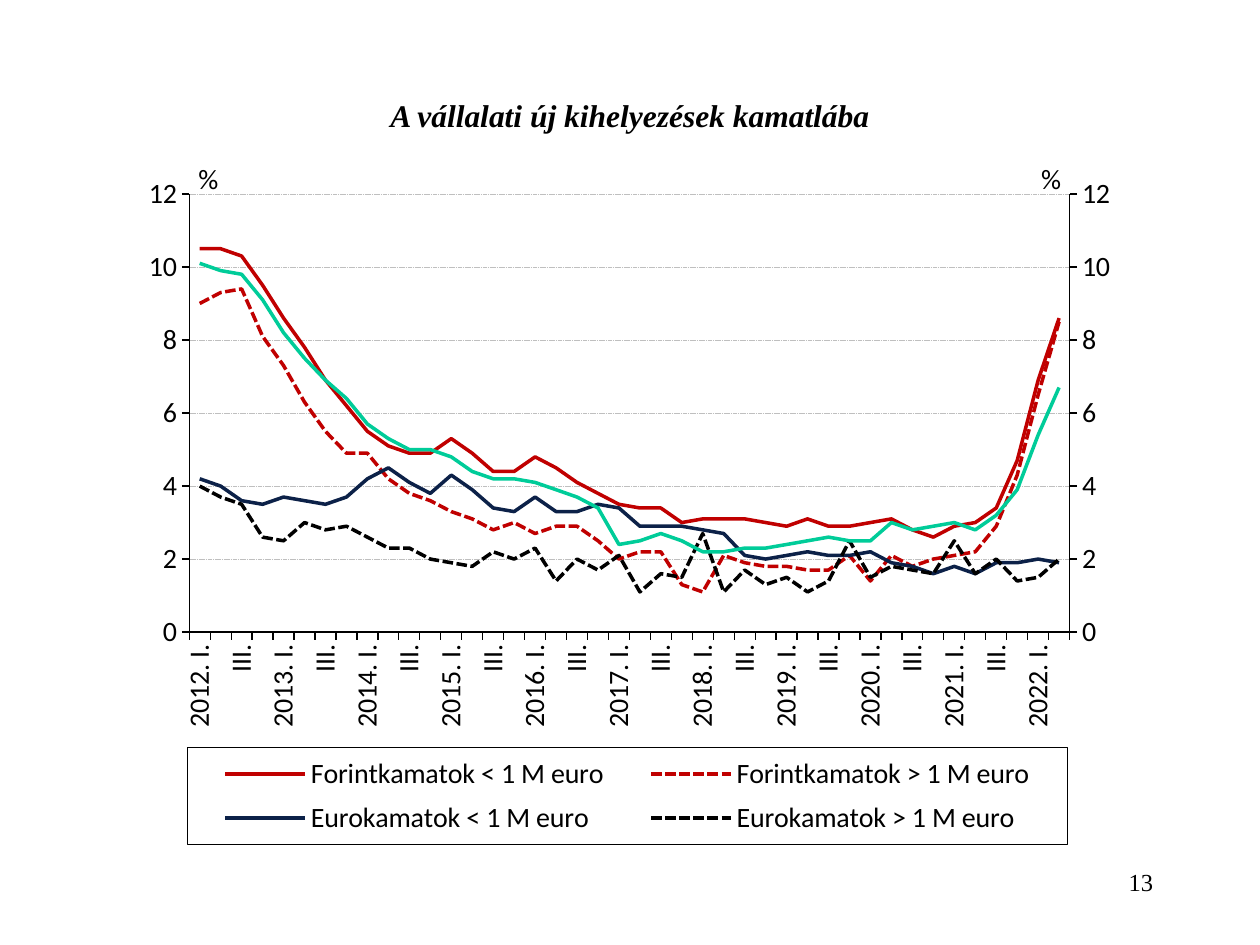
from copy import deepcopy
from dataclasses import dataclass
from itertools import product

from lxml.etree import SubElement
from pptx import Presentation
from pptx.chart.data import CategoryChartData as ChartData
from pptx.dml.color import RGBColor
from pptx.enum.chart import XL_CHART_TYPE as ChartType
from pptx.enum.chart import XL_LEGEND_POSITION as LegendPosition
from pptx.enum.chart import XL_TICK_MARK as TickMark
from pptx.enum.dml import MSO_LINE as Dash
from pptx.enum.text import MSO_ANCHOR as Anchor
from pptx.enum.text import PP_ALIGN as Align
from pptx.oxml import parse_xml
from pptx.oxml.ns import nsdecls, qn
from pptx.util import Inches, Pt

CHART_FONT = {"name": "Calibri", "size": Pt(16), "bold": False}
TITLE_FONT = {"name": "Times New Roman", "size": Pt(18), "bold": True, "italic": True}
PAGE_FONT = {"name": "Times New Roman", "size": Pt(14)}
VALUE_SCALE = {"minimum_scale": 0, "maximum_scale": 12, "major_unit": 2}


@dataclass
class Rate:
    name: str
    color: str
    dash: Dash
    values: list[float]


RATES = [
    Rate("Forintkamatok < 1 M euro", "C00000", Dash.SOLID,
         [10.5, 10.5, 10.3, 9.5, 8.6, 7.8, 6.9, 6.2, 5.5, 5.1, 4.9, 4.9, 5.3, 4.9,
          4.4, 4.4, 4.8, 4.5, 4.1, 3.8, 3.5, 3.4, 3.4, 3, 3.1, 3.1, 3.1, 3,
          2.9, 3.1, 2.9, 2.9, 3, 3.1, 2.8, 2.6, 2.9, 3, 3.4, 4.7, 6.9, 8.6]),
    Rate("Forintkamatok > 1 M euro", "C00000", Dash.SQUARE_DOT,
         [9, 9.3, 9.4, 8.1, 7.3, 6.3, 5.5, 4.9, 4.9, 4.2, 3.8, 3.6, 3.3, 3.1,
          2.8, 3, 2.7, 2.9, 2.9, 2.5, 2, 2.2, 2.2, 1.3, 1.1, 2.1, 1.9, 1.8,
          1.8, 1.7, 1.7, 2.1, 1.4, 2.1, 1.8, 2, 2.1, 2.2, 2.9, 4.3, 6.5, 8.5]),
    Rate("Eurokamatok < 1 M euro", "0C2148", Dash.SOLID,
         [4.2, 4, 3.6, 3.5, 3.7, 3.6, 3.5, 3.7, 4.2, 4.5, 4.1, 3.8, 4.3, 3.9,
          3.4, 3.3, 3.7, 3.3, 3.3, 3.5, 3.4, 2.9, 2.9, 2.9, 2.8, 2.7, 2.1, 2,
          2.1, 2.2, 2.1, 2.1, 2.2, 1.9, 1.8, 1.6, 1.8, 1.6, 1.9, 1.9, 2, 1.9]),
    Rate("Eurokamatok > 1 M euro", "000000", Dash.SQUARE_DOT,
         [4, 3.7, 3.5, 2.6, 2.5, 3, 2.8, 2.9, 2.6, 2.3, 2.3, 2, 1.9, 1.8,
          2.2, 2, 2.3, 1.4, 2, 1.7, 2.1, 1.1, 1.6, 1.5, 2.7, 1.1, 1.7, 1.3,
          1.5, 1.1, 1.4, 2.5, 1.5, 1.8, 1.7, 1.6, 2.5, 1.6, 2, 1.4, 1.5, 2]),
    Rate("", "00CC99", Dash.SOLID,
         [10.1, 9.9, 9.8, 9.1, 8.2, 7.5, 6.9, 6.4, 5.7, 5.3, 5, 5, 4.8, 4.4,
          4.2, 4.2, 4.1, 3.9, 3.7, 3.4, 2.4, 2.5, 2.7, 2.5, 2.2, 2.2, 2.3, 2.3,
          2.4, 2.5, 2.6, 2.5, 2.5, 3, 2.8, 2.9, 3, 2.8, 3.2, 3.9, 5.4, 6.7]),
]


def rgb(color: str) -> RGBColor:
    return RGBColor.from_string(color)


def apply(target, values: dict) -> None:
    for key, value in values.items():
        setattr(target, key, value)


def style_font(font, values: dict) -> None:
    apply(font, values)
    font.color.rgb = rgb("000000")


def style_line(line, color: str, width: float, dash: Dash = Dash.SOLID) -> None:
    line.color.rgb = rgb(color)
    apply(line, {"width": Pt(width), "dash_style": dash})


def write(frame, text: str, align: Align, font: dict) -> None:
    frame.text = text
    frame.word_wrap = True
    paragraph = frame.paragraphs[0]
    paragraph.alignment = align
    style_font(paragraph.runs[0].font, font)


def place(parent, index: int, inner: bool = False, **position: float) -> None:
    for old in parent.findall(qn("c:layout")):
        parent.remove(old)
    layout = parse_xml(f"<c:layout {nsdecls('c')}><c:manualLayout/></c:layout>")
    manual = layout[0]
    settings = {"layoutTarget": "inner"} if inner else {}
    settings |= {"xMode": "edge", "yMode": "edge"} | position
    for tag, value in settings.items():
        SubElement(manual, qn(f"c:{tag}")).set("val", str(value))
    parent.insert(index, layout)


def style_axis(axis) -> None:
    apply(axis, {"major_tick_mark": TickMark.OUTSIDE, "minor_tick_mark": TickMark.NONE})
    style_font(axis.tick_labels.font, CHART_FONT)
    style_line(axis.format.line, "000000", 0.75)


def style_axes(chart) -> None:
    quarters, percent = chart.category_axis, chart.value_axis
    style_axis(quarters)
    style_axis(percent)
    quarters_xml = quarters._element
    quarters_xml.find(qn("c:txPr")).find(qn("a:bodyPr")).set("rot", "-5400000")
    skip = parse_xml(f'<c:tickLblSkip {nsdecls("c")} val="2"/>')
    quarters_xml.find(qn("c:noMultiLvlLbl")).addprevious(skip)

    apply(percent, VALUE_SCALE | {"has_major_gridlines": True})
    apply(percent.tick_labels, {"number_format": "0", "number_format_is_linked": False})
    style_line(percent.major_gridlines.format.line, "BFBFBF", 0.25, Dash.SQUARE_DOT)
    unit = percent.axis_title
    unit.text_frame.text = "%"
    style_font(unit.text_frame.paragraphs[0].runs[0].font, CHART_FONT)
    body = unit.text_frame._txBody.find(qn("a:bodyPr"))
    body.set("rot", "0")
    body.set("vert", "horz")
    place(unit._element, 1, x=0.07, y=0)


def add_right_axis(chart) -> None:
    left_plot = chart.plots[0]._element
    right_plot = deepcopy(left_plot)
    left_series = left_plot.findall(qn("c:ser"))
    right_series = right_plot.findall(qn("c:ser"))
    left_plot.remove(left_series[-1])
    for series in right_series[:-1]:
        right_plot.remove(series)
    left_plot.addnext(right_plot)

    quarters_id, percent_id = "50010", "50020"
    for axis_id, value in zip(right_plot.findall(qn("c:axId")), (quarters_id, percent_id)):
        axis_id.set("val", value)
    left_percent = chart.value_axis._element
    right_quarters = deepcopy(chart.category_axis._element)
    right_percent = deepcopy(left_percent)
    for axis, settings in (
        (right_quarters, {"axId": quarters_id, "crossAx": percent_id, "delete": "1"}),
        (right_percent, {"axId": percent_id, "crossAx": quarters_id,
                         "axPos": "r", "crosses": "max"}),
    ):
        for tag, value in settings.items():
            axis.find(qn(f"c:{tag}")).set("val", value)
    right_percent.remove(right_percent.find(qn("c:majorGridlines")))
    place(right_percent.find(qn("c:title")), 1, x=0.9, y=0)
    left_percent.addnext(right_quarters)
    right_quarters.addnext(right_percent)


def style_legend(chart) -> None:
    chart.has_legend = True
    legend = chart.legend
    apply(legend, {"position": LegendPosition.BOTTOM, "include_in_layout": False})
    style_font(legend.font, CHART_FONT)
    legend_xml = legend._element
    legend_xml.insert(1, parse_xml(
        f'<c:legendEntry {nsdecls("c")}><c:idx val="{len(RATES) - 1}"/>'
        '<c:delete val="1"/></c:legendEntry>'))
    place(legend_xml, 2, x=0.064, y=0.85, w=0.867, h=0.14)
    legend_xml.find(qn("c:txPr")).addprevious(parse_xml(
        f'<c:spPr {nsdecls("c", "a")}><a:ln w="9525"><a:solidFill>'
        '<a:srgbClr val="000000"/></a:solidFill></a:ln></c:spPr>'))


def add_rate_chart(slide) -> None:
    rate_data = ChartData(number_format="0.0")
    quarters = [f"{year}. I." if quarter == "I." else quarter
                for year, quarter in product(range(2012, 2023), ("I.", "II.", "III.", "IV."))]
    rate_data.categories = quarters[:len(RATES[0].values)]
    for rate in RATES:
        rate_data.add_series(rate.name, rate.values)
    chart = slide.shapes.add_chart(
        ChartType.LINE, Inches(0.97), Inches(1.23), Inches(8.06), Inches(5.53), rate_data).chart
    chart.has_title = False
    style_font(chart.font, CHART_FONT)
    chart.plots[0].vary_by_categories = False
    for series, rate in zip(chart.plots[0].series, RATES):
        series.smooth = False
        style_line(series.format.line, rate.color, 2, rate.dash)
    style_axes(chart)
    add_right_axis(chart)
    style_legend(chart)
    place(chart._chartSpace.chart.plotArea, 0, inner=True, x=0.066, y=0.056, w=0.867, h=0.629)


def main() -> None:
    deck = Presentation()
    apply(deck, {"slide_width": Inches(10), "slide_height": Inches(7.5)})
    slide = deck.slides.add_slide(deck.slide_layouts[5])
    heading = slide.shapes.title
    apply(heading, {"left": Inches(0.75), "top": Inches(0.67),
                    "width": Inches(8.5), "height": Inches(0.48)})
    heading.text_frame.vertical_anchor = Anchor.MIDDLE
    write(heading.text_frame, "A vállalati új kihelyezések kamatlába", Align.CENTER, TITLE_FONT)
    add_rate_chart(slide)
    page = slide.shapes.add_textbox(Inches(7.17), Inches(6.83), Inches(2.08), Inches(0.5))
    write(page.text_frame, "13", Align.RIGHT, PAGE_FONT)
    deck.save("out.pptx")


if __name__ == "__main__":
    main()
